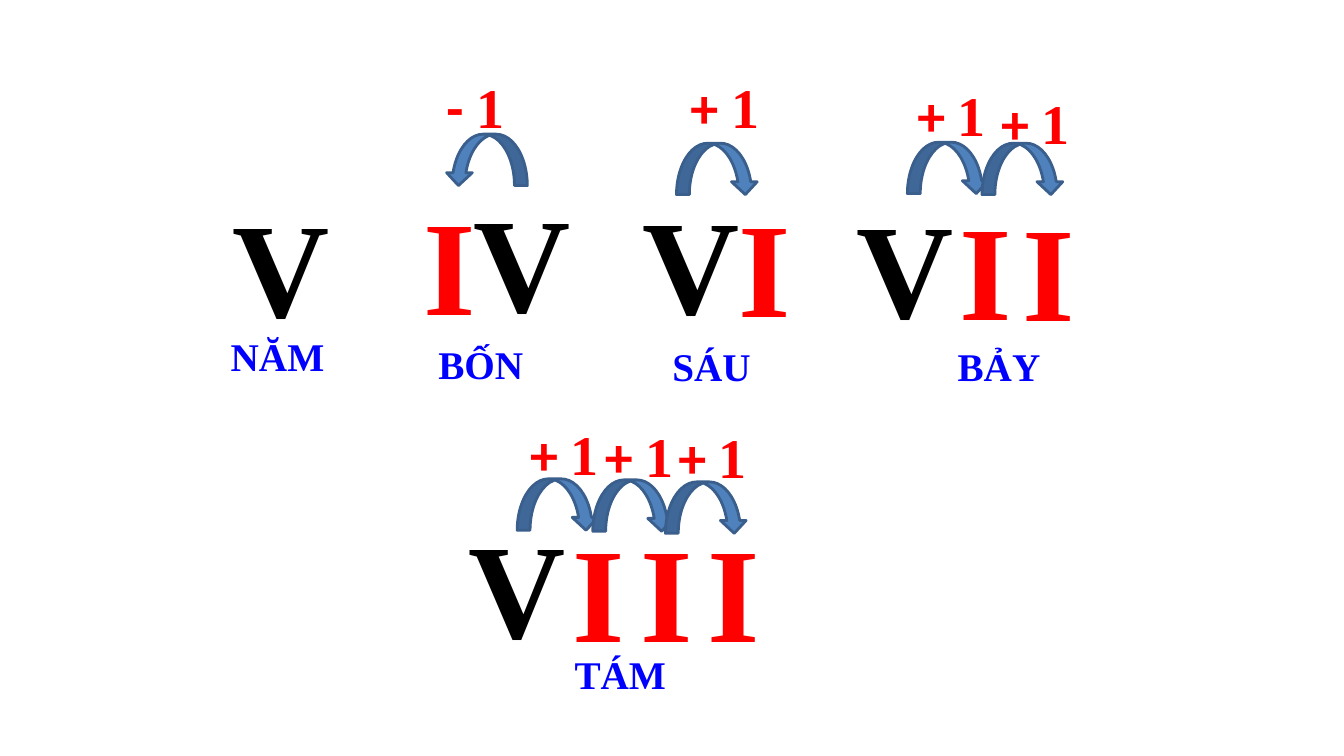
from pptx import Presentation
from pptx.dml.color import RGBColor
from pptx.enum.shapes import MSO_SHAPE as Shape
from pptx.enum.text import MSO_AUTO_SIZE as Fit, PP_ALIGN as Align
from pptx.util import Inches, Pt

RED = RGBColor(0xFF, 0x00, 0x00)
BLACK = RGBColor(0x00, 0x00, 0x00)
BLUE = RGBColor(0x00, 0x00, 0xFF)
STEEL = RGBColor(0x4F, 0x81, 0xBD)
NAVY = RGBColor(0x3A, 0x5F, 0x8C)
SERIF, SANS = "Times New Roman", "Calibri"

UPPER, LOWER = 0.67, 4.11  # tops of the two rows

# Offsets from each numeral's corner:
# letters (glyph, x, y), hops (sign, arrow x, y, label x, y), word (text, x, y)
NUMERALS = [
    dict(left=1.88, top=UPPER, letters=[("V", 0, 1.1)], hops=[],
         word=("NĂM", 0.31, 2.58)),
    dict(left=3.55, top=UPPER, letters=[("I", 0, 1.08), ("V", 0.72, 1.05)],
         hops=[("-", 1.02, 0.51, 0.78, 0)], word=("BỐN", 0.7, 2.66)),
    dict(left=5.95, top=UPPER, letters=[("V", 0, 1.07), ("I", 0.73, 1.1)],
         hops=[("+", 0.91, 0.6, 0.8, 0)], word=("SÁU", 0.62, 2.68)),
    dict(left=8.07, top=UPPER,
         letters=[("V", 0, 1.11), ("I", 0.8, 1.13), ("I", 1.43, 1.14)],
         hops=[("+", 1.08, 0.59, 0.93, 0.08), ("+", 1.82, 0.6, 1.76, 0.16)],
         word=("BẢY", 1.33, 2.68)),
    dict(left=4.22, top=LOWER,
         letters=[("V", 0, 0.84), ("I", 0.81, 0.88), ("I", 1.49, 0.88),
                  ("I", 2.15, 0.88)],
         hops=[("+", 1.06, 0.49, 0.94, 0), ("+", 1.81, 0.5, 1.68, 0.02),
               ("+", 2.53, 0.52, 2.41, 0.03)],
         word=("TÁM", 1.38, 2.29)),
]


def add_text(slide, box, runs, size, color, align=Align.LEFT):
    """Write bold (text, font) runs as one line in a box."""
    area = slide.shapes.add_textbox(*map(Inches, box))
    frame = area.text_frame
    frame.word_wrap = True
    frame.auto_size = Fit.SHAPE_TO_FIT_TEXT
    line = frame.paragraphs[0]
    line.alignment = align
    for text, face in runs:
        run = line.add_run()
        run.text = text
        font = run.font
        font.name, font.size, font.bold = face, Pt(size), True
        font.color.rgb = color


def add_arrow(slide, left, top, back):
    """Draw an arc that hops to the right, or to the left when back is set."""
    arrow = slide.shapes.add_shape(
        Shape.CURVED_RIGHT_ARROW, *map(Inches, (left, top, 0.51, 0.81)))
    arrow.rotation = 270 if back else 90
    frame = arrow._element.spPr.get_or_add_xfrm()
    frame.set("flipV", "1")
    if back:
        frame.set("flipH", "1")
    arrow.shadow.inherit = False
    arrow.fill.solid()
    arrow.fill.fore_color.rgb = STEEL
    arrow.line.color.rgb = NAVY
    arrow.line.width = Pt(2)


def add_numeral(slide, left, top, letters, hops, word):
    for glyph, x, y in letters:
        add_text(slide, (left + x, top + y, 1.81, 1.72), [(glyph, SERIF)],
                 size=96, color=BLACK if glyph == "V" else RED,
                 align=Align.CENTER)
    for sign, x, y, tag_x, tag_y in hops:
        add_arrow(slide, left + x, top + y, back=sign == "-")
        add_text(slide, (left + tag_x, top + tag_y, 1.09, 0.77),
                 [(sign + " ", SANS), ("1", SERIF)], size=40, color=RED)
    name, x, y = word
    add_text(slide, (left + x, top + y, 1.2, 0.57), [(name, SERIF)],
             size=28, color=BLUE)


def main():
    deck = Presentation()
    deck.slide_width, deck.slide_height = Inches(13.33), Inches(7.5)
    slide = deck.slides.add_slide(deck.slide_layouts[6])
    for numeral in NUMERALS:
        add_numeral(slide, **numeral)
    deck.save("out.pptx")


if __name__ == "__main__":
    main()
